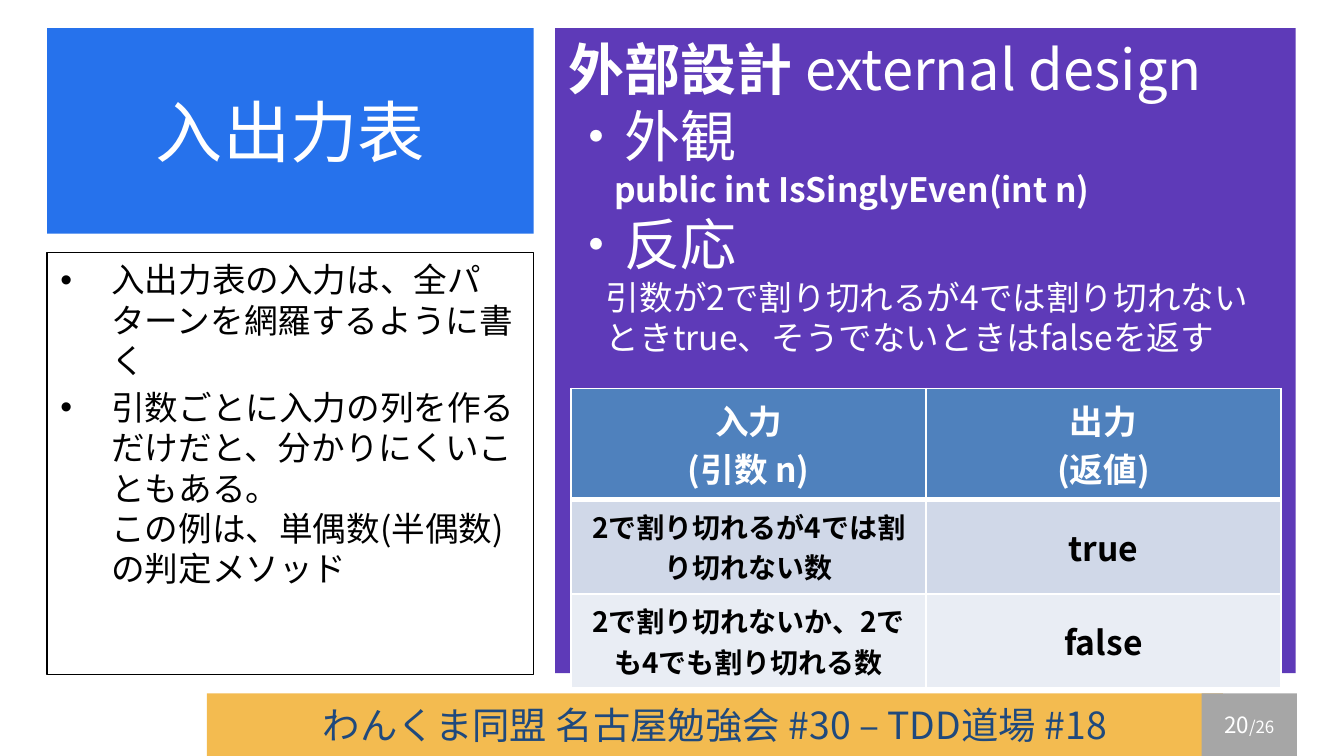
"""Build the input/output table slide."""
from dataclasses import dataclass
from typing import Optional

from lxml.etree import SubElement
from pptx import Presentation
from pptx.dml.color import RGBColor
from pptx.enum.shapes import MSO_SHAPE
from pptx.enum.text import MSO_ANCHOR, PP_ALIGN
from pptx.oxml.ns import qn
from pptx.util import Inches, Pt

FONT = "Noto Sans CJK JP"
COLORS = {
    "white": "FFFFFF", "black": "000000", "navy": "1F497D", "blue": "2672EC",
    "purple": "5E3AB8", "amber": "F3BB50", "gray": "A6A6A6",
    "header": "4F81BD", "band": "D0D8E8", "light": "E9EDF4",
}


@dataclass
class Piece:
    text: str
    size: float
    bold: bool = False


@dataclass
class Line:
    pieces: list[Piece]
    indent: float = 0
    bullet: bool = False
    before: float = 0


@dataclass
class Panel:
    left: float
    top: float
    width: float
    height: float
    fill: str
    color: str
    lines: list[Line]
    outline: Optional[str] = None
    centered: bool = True


def rgb(name: str) -> RGBColor:
    """Return a named colour."""
    return RGBColor.from_string(COLORS[name])


def add_run(paragraph, piece: Piece, color: str) -> None:
    """Add one styled run."""
    run = paragraph.add_run()
    run.text = piece.text
    run.font.size = Pt(piece.size)
    run.font.bold = piece.bold
    run.font.color.rgb = rgb(color)
    run.font.name = FONT
    SubElement(run._r.get_or_add_rPr(), qn("a:ea"), typeface=FONT)


def write_lines(frame, lines: list[Line], color: str, centered: bool) -> None:
    """Write paragraphs, breaking lines inside a piece at newlines."""
    for index, line in enumerate(lines):
        paragraph = frame.add_paragraph() if index else frame.paragraphs[0]
        paragraph.alignment = PP_ALIGN.CENTER if centered else PP_ALIGN.LEFT
        paragraph.space_before = Pt(line.before)
        properties = paragraph._p.get_or_add_pPr()
        properties.set("marL", str(Inches(line.indent)))
        if line.bullet:
            properties.set("indent", str(-Inches(line.indent)))
            SubElement(properties, qn("a:buFont"), typeface="Arial")
            SubElement(properties, qn("a:buChar"), char="•")
        for piece in line.pieces:
            for number, text in enumerate(piece.text.split("\n")):
                if number:
                    paragraph.add_line_break()
                add_run(paragraph, Piece(text, piece.size, piece.bold), color)


def draw_panel(slide, panel: Panel) -> None:
    """Draw a filled rectangle with its text."""
    shape = slide.shapes.add_shape(
        MSO_SHAPE.RECTANGLE, Inches(panel.left), Inches(panel.top),
        Inches(panel.width), Inches(panel.height))
    shape.shadow.inherit = False
    shape.fill.solid()
    shape.fill.fore_color.rgb = rgb(panel.fill)
    if panel.outline:
        shape.line.color.rgb = rgb(panel.outline)
        shape.line.width = Pt(0.75)
    else:
        shape.line.fill.background()
    frame = shape.text_frame
    frame.word_wrap = True
    frame.vertical_anchor = MSO_ANCHOR.MIDDLE if panel.centered else MSO_ANCHOR.TOP
    if not panel.centered:
        frame.margin_right = Inches(0.05)
    write_lines(frame, panel.lines, panel.color, panel.centered)


def add_borders(cell, bottom: float, top: float) -> None:
    """Add white borders to a table cell."""
    properties = cell._tc.get_or_add_tcPr()
    for tag, width in (("lnL", 1), ("lnR", 1), ("lnT", top), ("lnB", bottom)):
        border = SubElement(properties, qn(f"a:{tag}"), w=str(Pt(width)))
        fill = SubElement(border, qn("a:solidFill"))
        SubElement(fill, qn("a:srgbClr"), val=COLORS["white"])


def draw_table(slide, rows: list[list[Piece]]) -> None:
    """Draw the input/output table."""
    heights = (0.82, 0.7, 0.7)
    fills = ("header", "band", "light")
    table = slide.shapes.add_table(
        len(rows), 2, Inches(4.25), Inches(2.89), Inches(5.28),
        Inches(sum(heights))).table
    for column in table.columns:
        column.width = Inches(2.64)
    for index, pieces in enumerate(rows):
        table.rows[index].height = Inches(heights[index])
        for number, piece in enumerate(pieces):
            cell = table.cell(index, number)
            add_borders(cell, 1 if index else 3, 3 if index == 1 else 1)
            cell.fill.solid()
            cell.fill.fore_color.rgb = rgb(fills[index])
            cell.vertical_anchor = MSO_ANCHOR.MIDDLE
            color = "black" if index else "white"
            write_lines(cell.text_frame, [Line([piece])], color, True)


PANELS = [
    Panel(1.54, 5.16, 7.56, 0.47, "amber", "navy",
          [Line([Piece("わんくま同盟 名古屋勉強会 #30 – TDD道場 #18", 20)])]),
    Panel(8.94, 5.16, 0.71, 0.47, "gray", "white",
          [Line([Piece("20", 12), Piece("/26", 9)])]),
    Panel(0.35, 0.21, 3.62, 1.53, "blue", "white", [Line([Piece("入出力表", 36)])]),
    Panel(0.35, 1.88, 3.62, 3.14, "white", "black", [
        Line([Piece("入出力表の入力は、全パターンを網羅するように書く", 18)], 0.38, True),
        Line([Piece("引数ごとに入力の列を作るだけだと、分かりにくいこともある。\n"
                    "この例は、単偶数(半偶数)の判定メソッド", 18)], 0.38, True, 3.6),
    ], outline="black", centered=False),
    Panel(4.13, 0.21, 5.51, 4.8, "purple", "white", [
        Line([Piece("外部設計 ", 30, True), Piece("external design", 30)]),
        Line([Piece("・外観", 30)]),
        Line([Piece("public int IsSinglyEven(int n)", 18, True)], 0.34),
        Line([Piece("・反応", 30)]),
        Line([Piece("引数が2で割り切れるが4では割り切れない\n"
                    "ときtrue、そうでないときはfalseを返す", 18)], 0.28),
    ], centered=False),
]
ROWS = [
    [Piece("入力\n(引数 n)", 18, True), Piece("出力\n(返値)", 18, True)],
    [Piece("2で割り切れるが4では割り切れない数", 15, True), Piece("true", 18, True)],
    [Piece("2で割り切れないか、2でも4でも割り切れる数", 15, True),
     Piece("false", 18, True)],
]


def main() -> None:
    """Build and save the presentation."""
    presentation = Presentation()
    presentation.slide_width = Inches(10)
    presentation.slide_height = Inches(10 * 9 / 16)
    slide = presentation.slides.add_slide(presentation.slide_layouts[6])
    for panel in PANELS:
        draw_panel(slide, panel)
    draw_table(slide, ROWS)
    presentation.save("out.pptx")


if __name__ == "__main__":
    main()
